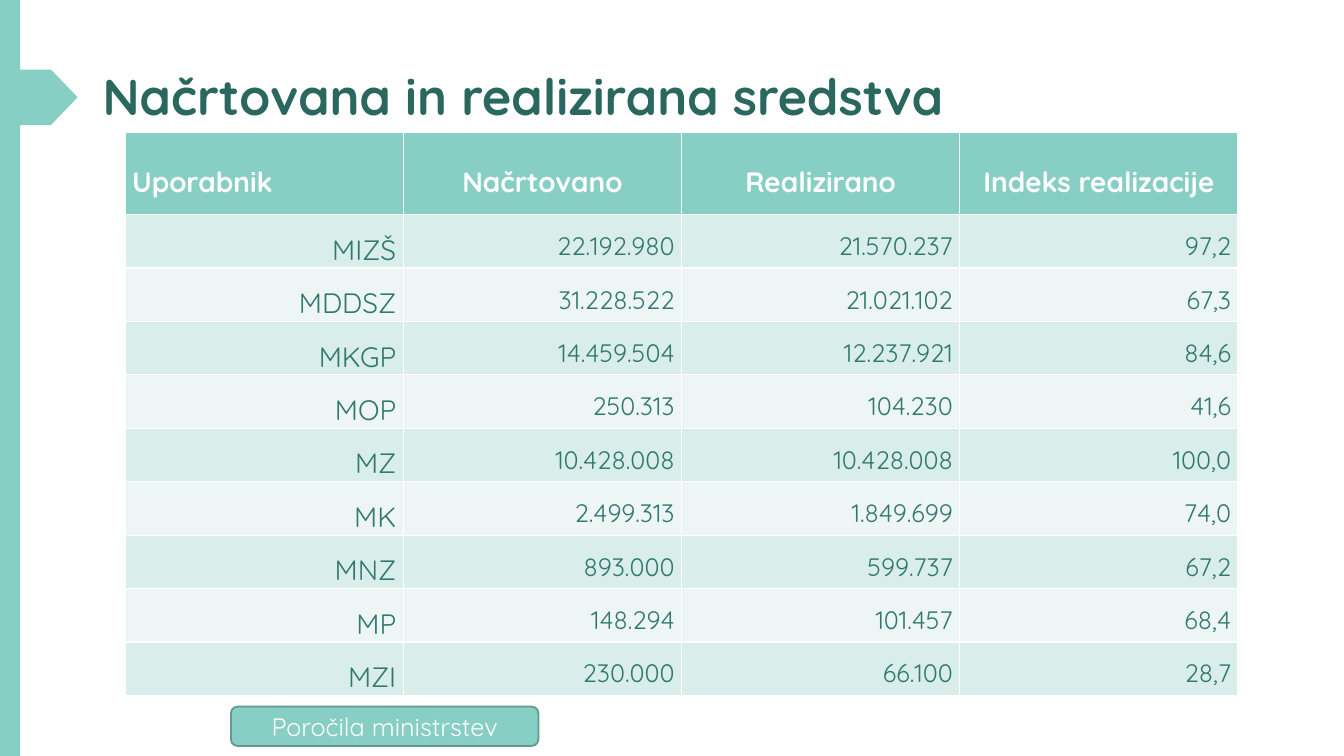
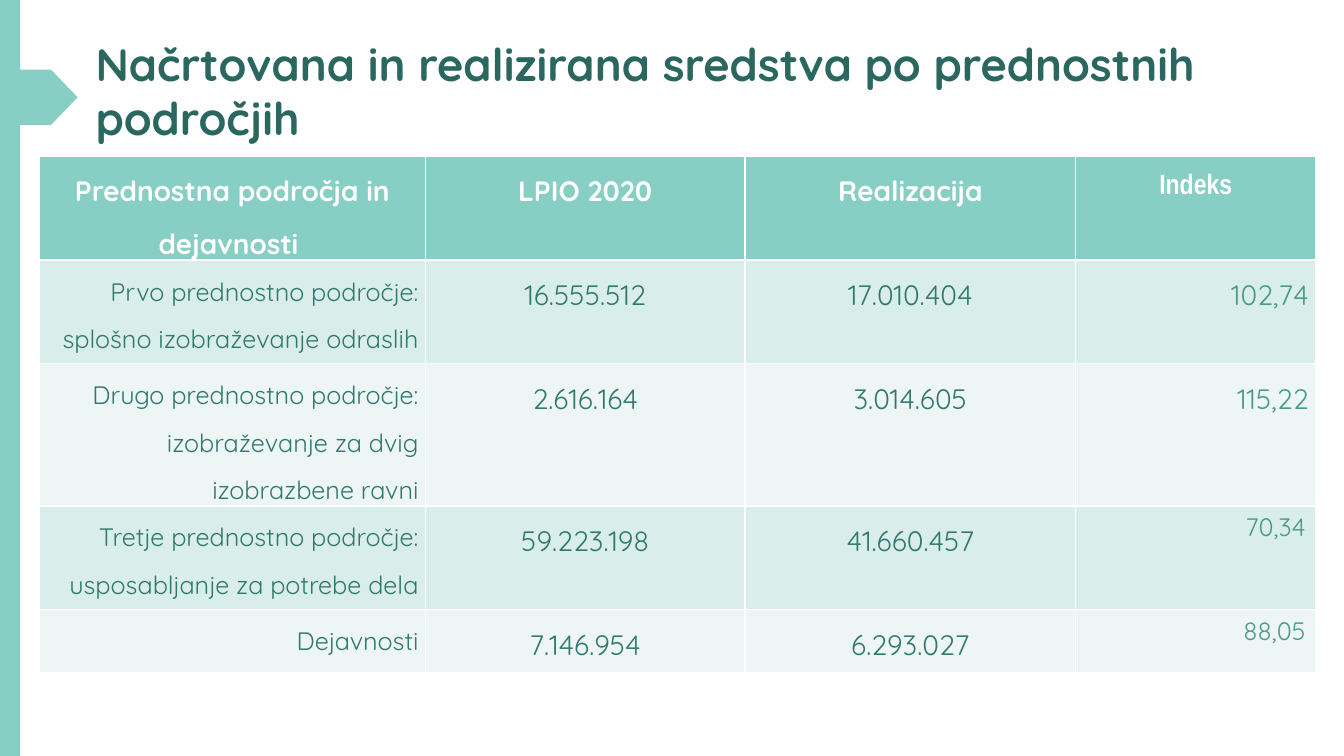
"""Build two slides of tables on planned and realised funds."""
from pptx import Presentation, util as u
from pptx.dml.color import RGBColor
from pptx.enum import shapes, text

FONT = "Quicksand"
TEAL, TITLE, BODY, INDEX = "87CEC4", "2A685F", "31796F", "4A9B83"
WHITE, EDGE = "FFFFFF", "649891"
BANDS = ["D9EDEA", "EDF6F5"]
LEFT, CENTER, RIGHT = text.PP_ALIGN.LEFT, text.PP_ALIGN.CENTER, text.PP_ALIGN.RIGHT


def rgb(value):
    return RGBColor.from_string(value)


def style(p, size, color, bold=False, align=LEFT, name=FONT):
    p.alignment = align
    p.font.name = name
    p.font.size = u.Pt(size)
    p.font.bold = bold
    p.font.color.rgb = rgb(color)


slides = [
    {
        "title": "Načrtovana in realizirana sredstva",
        "title_at": (0.92, 0.6), "title_size": 36,
        "table_at": (1.24, 1.31),
        "cols": [2.76] * 4,
        "heights": [0.82] + [0.53] * 9,
        "header_anchor": text.MSO_ANCHOR.MIDDLE,
        "header_aligns": [LEFT, CENTER, CENTER, CENTER],
        "aligns": [RIGHT] * 4,
        "sizes": [20, 18, 18, 18],
        "colors": [BODY] * 4,
        "rows": [
            ["Uporabnik", "Načrtovano", "Realizirano", "Indeks realizacije"],
            ["MIZŠ", "22.192.980", "21.570.237", "97,2"],
            ["MDDSZ", "31.228.522", "21.021.102", "67,3"],
            ["MKGP", "14.459.504", "12.237.921", "84,6"],
            ["MOP", "250.313", "104.230", "41,6"],
            ["MZ", "10.428.008", "10.428.008", "100,0"],
            ["MK", "2.499.313", "1.849.699", "74,0"],
            ["MNZ", "893.000", "599.737", "67,2"],
            ["MP", "148.294", "101.457", "68,4"],
            ["MZI", "230.000", "66.100", "28,7"],
        ],
    },
    {
        "title": "Načrtovana in realizirana sredstva po prednostnih področjih",
        "title_at": (0.85, 0.31), "title_size": 32.4,
        "table_at": (0.39, 1.55),
        "cols": [3.83, 3.17, 3.28, 2.38],
        "heights": [1.03, 1.03, 1.41, 1.03, 0.62],
        "header_anchor": text.MSO_ANCHOR.TOP,
        "header_aligns": [CENTER] * 4,
        "aligns": [RIGHT, CENTER, CENTER, RIGHT],
        "sizes": [18, 20, 20, 20],
        "colors": [BODY, BODY, BODY, INDEX],
        "rows": [
            ["Prednostna področja in dejavnosti ", "LPIO 2020", "Realizacija", "Indeks"],
            ["Prvo prednostno področje: splošno izobraževanje odraslih",
             "16.555.512", "17.010.404", "102,74"],
            ["Drugo prednostno področje: izobraževanje za dvig izobrazbene ravni",
             "2.616.164", "3.014.605", "115,22"],
            ["Tretje prednostno področje: usposabljanje za potrebe dela",
             "59.223.198", "41.660.457", "70,34"],
            ["Dejavnosti", "7.146.954", "6.293.027", "88,05"],
        ],
    },
]

prs = Presentation()
prs.slide_width, prs.slide_height = u.Inches(13.33), u.Inches(7.5)

for data in slides:
    s = prs.slides.add_slide(prs.slide_layouts[6])
    for kind, top, width, height in [
        (shapes.MSO_SHAPE.RECTANGLE, 0, 0.2, 7.5),
        (shapes.MSO_SHAPE.PENTAGON, 0.69, 0.77, 0.55),
    ]:
        sp = s.shapes.add_shape(kind, 0, u.Inches(top), u.Inches(width), u.Inches(height))
        sp.shadow.inherit = False
        sp.fill.solid()
        sp.fill.fore_color.rgb = rgb(TEAL)
        sp.line.fill.background()
    sp.adjustments[0] = 0.48

    left, top = data["title_at"]
    sp = s.shapes.add_textbox(u.Inches(left), u.Inches(top), u.Inches(12.13), u.Inches(1.4))
    tf = sp.text_frame
    tf.word_wrap = True
    tf.text = data["title"]
    style(tf.paragraphs[0], data["title_size"], TITLE, bold=True)

    rows, cols, heights = data["rows"], data["cols"], data["heights"]
    left, top = data["table_at"]
    table = s.shapes.add_table(
        len(rows), len(cols), u.Inches(left), u.Inches(top),
        u.Inches(sum(cols)), u.Inches(sum(heights))).table
    for column, width in zip(table.columns, cols):
        column.width = u.Inches(width)
    for i, row in enumerate(rows):
        table.rows[i].height = u.Inches(heights[i])
        for j, value in enumerate(row):
            cell = table.cell(i, j)
            cell.fill.solid()
            cell.fill.fore_color.rgb = rgb(BANDS[(i - 1) % 2] if i else TEAL)
            cell.margin_left = cell.margin_right = u.Inches(0.07)
            cell.margin_top = cell.margin_bottom = 0
            cell.text = value
            p = cell.text_frame.paragraphs[0]
            p.line_spacing = 1.5
            if i:
                style(p, data["sizes"][j], data["colors"][j], align=data["aligns"][j])
            else:
                cell.vertical_anchor = data["header_anchor"]
                style(p, 20, WHITE, bold=True, align=data["header_aligns"][j])

    if data is slides[0]:
        sp = s.shapes.add_shape(
            shapes.MSO_SHAPE.ROUNDED_RECTANGLE,
            u.Inches(2.29), u.Inches(7.01), u.Inches(3.05), u.Inches(0.39))
        sp.shadow.inherit = False
        sp.fill.solid()
        sp.fill.fore_color.rgb = rgb(TEAL)
        sp.line.color.rgb = rgb(EDGE)
        sp.line.width = u.Pt(1.25)
        tf = sp.text_frame
        tf.text = "Poročila ministrstev"
        tf.vertical_anchor = text.MSO_ANCHOR.MIDDLE
        style(tf.paragraphs[0], 18, WHITE, align=CENTER)
    else:
        table.cell(0, 3).text_frame.paragraphs[0].font.name = "Arial Narrow"
        for i in (0, 3, 4):
            cell = table.cell(i, 3)
            cell.margin_left = cell.margin_right = u.Inches(0.1)
            cell.margin_top = cell.margin_bottom = u.Inches(0.05)
        for i in (3, 4):
            p = table.cell(i, 3).text_frame.paragraphs[0]
            p.line_spacing = 1
            p.font.size = u.Pt(18)

prs.save("out.pptx")
